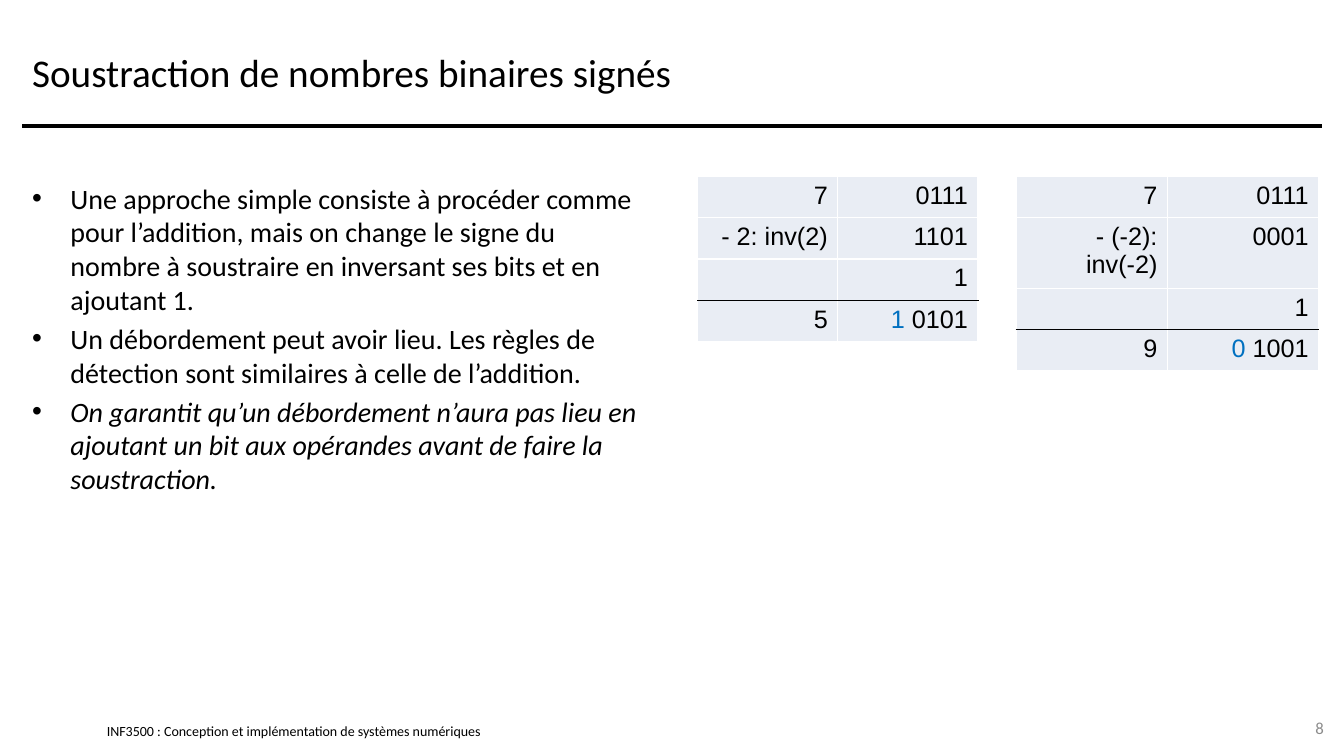
import pptx
import pptx.dml.color
import pptx.enum.shapes
import pptx.enum.text
import pptx.oxml
import pptx.oxml.ns
import pptx.util
from lxml import etree

RGB = pptx.dml.color.RGBColor
BLACK = RGB(0x00, 0x00, 0x00)
WHITE = RGB(0xFF, 0xFF, 0xFF)
GRAY = RGB(0x8C, 0x8C, 0x8C)
BLUE = RGB(0x00, 0x70, 0xC0)
PALE = RGB(0xE9, 0xED, 0xF4)
RIGHT = pptx.enum.text.PP_ALIGN.RIGHT
MIDDLE = pptx.enum.text.MSO_ANCHOR.MIDDLE
TOP = pptx.enum.text.MSO_ANCHOR.TOP
LEFT, WIDTH = 22, 1289
ROW = 41

POINTS = [
    ("Une approche simple consiste à procéder comme pour l’addition, mais on change "
     "le signe du nombre à soustraire en inversant ses bits et en ajoutant 1.", False),
    ("Un débordement peut avoir lieu. Les règles de détection sont similaires à "
     "celle de l’addition.", False),
    ("On garantit qu’un débordement n’aura pas lieu en ajoutant un bit aux opérandes "
     "avant de faire la soustraction.", True),
]


def px(count):
    """Turn hundredths of an inch into EMU."""
    return pptx.util.Emu(count * 9144)


def write(para, text, size=18, font="Calibri", color=BLACK, italic=False, align=None):
    """Add one formatted run to a paragraph."""
    if align is not None:
        para.alignment = align
    run = para.add_run()
    run.text = text
    run.font.size = pptx.util.Pt(size)
    run.font.name = font
    run.font.color.rgb = color
    run.font.italic = italic


def add_box(slide, left, top, width, height, anchor=MIDDLE, inset=True):
    box = slide.shapes.add_textbox(px(left), px(top), px(width), px(height))
    frame = box.text_frame
    frame.word_wrap = True
    frame.vertical_anchor = anchor
    if not inset:
        frame.margin_left = frame.margin_right = 0
        frame.margin_top = frame.margin_bottom = 0
    return frame


def add_rule(slide, left, top, width):
    line = slide.shapes.add_connector(
        pptx.enum.shapes.MSO_CONNECTOR.STRAIGHT,
        px(left), px(top), px(left + width), px(top))
    line.line.color.rgb = BLACK
    line.line.width = pptx.util.Pt(3)
    props = line._element.spPr
    etree.SubElement(props, pptx.oxml.ns.qn("a:effectLst"))


def add_list(frame, points):
    for index, (text, italic) in enumerate(points):
        para = frame.add_paragraph() if index else frame.paragraphs[0]
        props = para._p.get_or_add_pPr()
        props.set("marL", str(px(38)))
        props.set("indent", str(px(-38)))
        for tag, key, value in (("buFont", "typeface", "Arial"), ("buChar", "char", "•")):
            mark = etree.SubElement(props, pptx.oxml.ns.qn(f"a:{tag}"))
            mark.set(key, value)
        if index:
            para.space_before = pptx.util.Pt(4)
        write(para, text, size=20, italic=italic)


def set_edge(cell, side, color):
    props = cell._tc.get_or_add_tcPr()
    props.append(pptx.oxml.parse_xml(
        f'<a:ln{side} {pptx.oxml.ns.nsdecls("a")} w="12700"><a:solidFill>'
        f'<a:srgbClr val="{color}"/></a:solidFill></a:ln{side}>'))


def add_sum(slide, left, top, width, rows):
    """Draw a two-column sum with a black line above its last row."""
    last = len(rows) - 1
    shape = slide.shapes.add_table(
        len(rows), 2, px(left), px(top), px(width), px(ROW * len(rows)))
    table = shape.table
    table.first_row = table.horz_banding = False
    for col in table.columns:
        col.width = px(width // 2)
    for y, row in enumerate(rows):
        table.rows[y].height = px(ROW)
        for x, runs in enumerate(row):
            cell = table.cell(y, x)
            for side in "LRTB":
                ruled = (side, y) in (("B", last - 1), ("T", last))
                set_edge(cell, side, BLACK if ruled else WHITE)
            cell.fill.solid()
            cell.fill.fore_color.rgb = PALE
            for text, color in runs:
                write(cell.text_frame.paragraphs[0], text, font="Arial",
                      color=color, align=RIGHT)


def sum_rows(term, bits, total, carry, result):
    """Lay out seven minus a term, with the carry bit in blue."""
    plain = [("7", "0111"), (term, bits), ("", "1")]
    rows = [[[(text, BLACK)] if text else [] for text in pair] for pair in plain]
    rows.append([[(total, BLACK)], [(carry, BLUE), (" " + result, BLACK)]])
    return rows


def main():
    deck = pptx.Presentation()
    deck.slide_width, deck.slide_height = px(1333), px(750)
    slide = deck.slides.add_slide(deck.slide_layouts[6])

    foot = add_box(slide, 106, 717, 511, 17, inset=False)
    write(foot.paragraphs[0],
          "INF3500 : Conception et implémentation de systèmes numériques", size=10)
    add_rule(slide, LEFT, 125, WIDTH)
    title = add_box(slide, LEFT, 17, WIDTH, 108)
    write(title.paragraphs[0], "Soustraction de nombres binaires signés", size=28)
    add_list(add_box(slide, LEFT, 175, 633, 508, anchor=TOP), POINTS)
    number = add_box(slide, 1256, 702, 67, 40)
    write(number.paragraphs[0], "8", size=12, color=GRAY, align=RIGHT)

    add_sum(slide, 692, 175, 278, sum_rows("- 2: inv(2)", "1101", "5", "1", "0101"))
    add_sum(slide, 1008, 175, 300, sum_rows("- (-2): inv(-2)", "0001", "9", "0", "1001"))
    deck.save("out.pptx")


if __name__ == "__main__":
    main()
